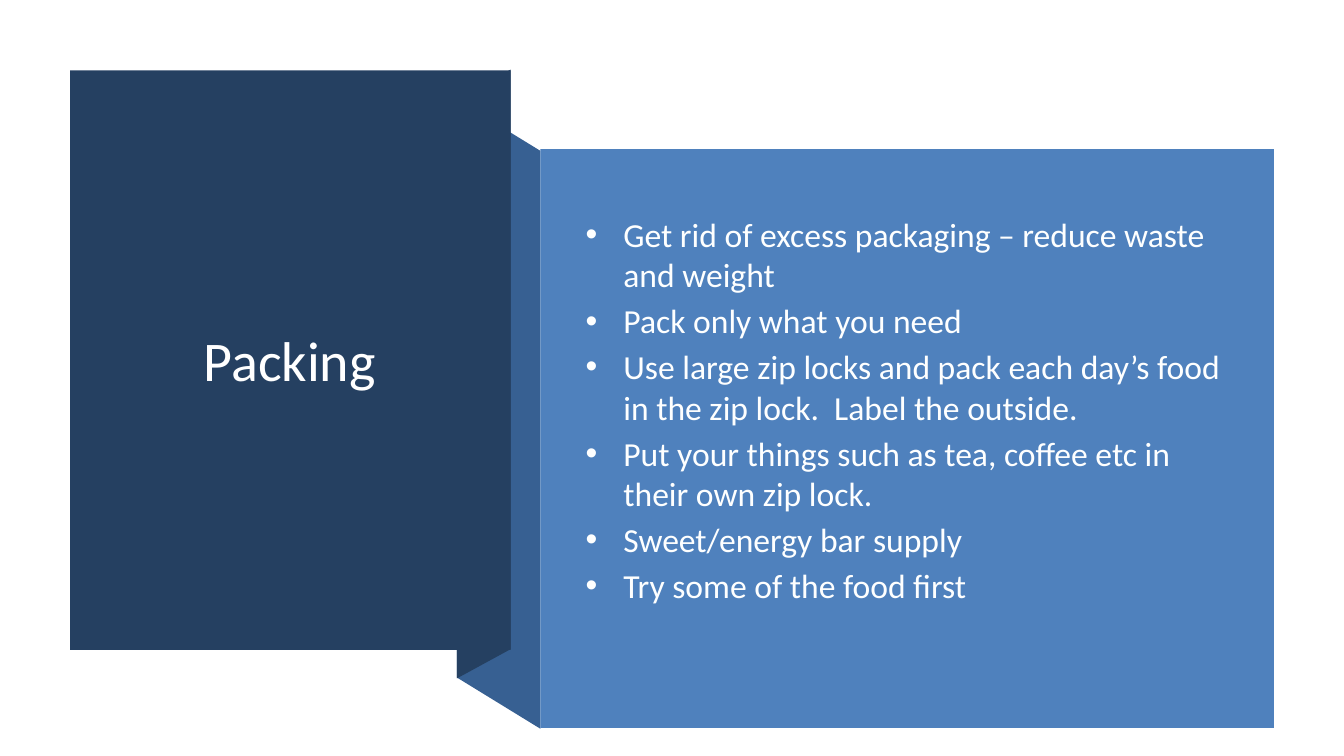
from dataclasses import dataclass

from lxml.etree import SubElement
from pptx import Presentation
from pptx.dml.color import RGBColor
from pptx.enum.shapes import MSO_SHAPE as SHAPE
from pptx.enum.text import MSO_ANCHOR as ANCHOR, PP_ALIGN as ALIGN
from pptx.oxml.ns import qn
from pptx.util import Pt


@dataclass(frozen=True)
class Theme:
    font: str = "Calibri"
    title_size: float = 40
    body_size: float = 24
    navy: str = "254061"
    strap: str = "376092"
    card: str = "4F81BD"
    title_text: str = "FFFFFF"
    body_text: str = "FEFFFF"


THEME = Theme()
TITLE = "Packing"
TIPS = [
    "Get rid of excess packaging – reduce waste and weight",
    "Pack only what you need",
    "Use large zip locks and pack each day’s food in the zip lock.  Label the outside.",
    "Put your things such as tea, coffee etc in their own zip lock.",
    "Sweet/energy bar supply",
    "Try some of the food first",
]


def paint(sp, color):
    sp.shadow.inherit = False
    sp.fill.solid()
    sp.fill.fore_color.rgb = RGBColor.from_string(color)
    sp.line.fill.background()


def add_rect(slide, box, color):
    sp = slide.shapes.add_shape(SHAPE.RECTANGLE, *map(Pt, box))
    paint(sp, color)


def add_band(slide, left, right, left_top, right_top, height, color):
    """Draw a slanted band with upright sides of equal height."""
    points = [(right, right_top + height), (left, left_top + height),
              (left, left_top), (right, right_top)]
    start, *rest = [(Pt(x), Pt(y)) for x, y in points]
    builder = slide.shapes.build_freeform(*start)
    builder.add_line_segments(rest, close=True)
    paint(builder.convert_to_shape(), color)


def add_text_frame(slide, left, top, width, height):
    tf = slide.shapes.add_textbox(*map(Pt, (left, top, width, height))).text_frame
    tf.word_wrap = True
    tf.vertical_anchor = ANCHOR.MIDDLE
    return tf


def add_run(p, text, size, color):
    r = p.add_run()
    r.text = text
    r.font.name = THEME.font
    r.font.size = Pt(size)
    r.font.color.rgb = RGBColor.from_string(color)


def set_bullet(p, indent):
    pPr = p._p.get_or_add_pPr()
    pPr.set("marL", str(Pt(indent)))
    pPr.set("indent", str(-Pt(indent)))
    SubElement(pPr, qn("a:buFont")).set("typeface", "Arial")
    SubElement(pPr, qn("a:buChar")).set("char", "•")


def add_ribbon(slide, panel, card):
    """Link the panel to the card with a strap and its folded end."""
    left, top, width, height = panel
    right = left + width
    fold_left = right - 38.4
    add_band(slide, fold_left, card[0], top + 21, card[1] + 1.2, 412.8, THEME.strap)
    add_band(slide, fold_left, right, top + 20.4, top - 0.5, height, THEME.navy)


def add_title_panel(slide, box):
    left, top, width, height = box
    add_rect(slide, box, THEME.navy)
    tf = add_text_frame(slide, left + 23.5, top + 26.8, width - 48, height - 54.7)
    p = tf.paragraphs[0]
    p.alignment = ALIGN.CENTER
    add_run(p, TITLE, THEME.title_size, THEME.title_text)


def add_tips_card(slide, box):
    left, top, width, height = box
    add_rect(slide, box, THEME.card)
    # The text sits a little above the middle of the card
    tf = add_text_frame(slide, left + 25.2, top + 28.7, width - 55.4, height - 99)
    for i, tip in enumerate(TIPS):
        p = tf.add_paragraph() if i else tf.paragraphs[0]
        set_bullet(p, 27)
        p.space_before = Pt(4 if i else 0)
        add_run(p, tip, THEME.body_size, THEME.body_text)


def main():
    prs = Presentation()
    prs.slide_width, prs.slide_height = Pt(960), Pt(540)
    slide = prs.slides.add_slide(prs.slide_layouts[6])
    panel = (50, 50.2, 314.8, 414)
    card = (386, 106.6, 524, 413.4)
    add_ribbon(slide, panel, card)
    add_title_panel(slide, panel)
    add_tips_card(slide, card)
    prs.save("out.pptx")


if __name__ == "__main__":
    main()
